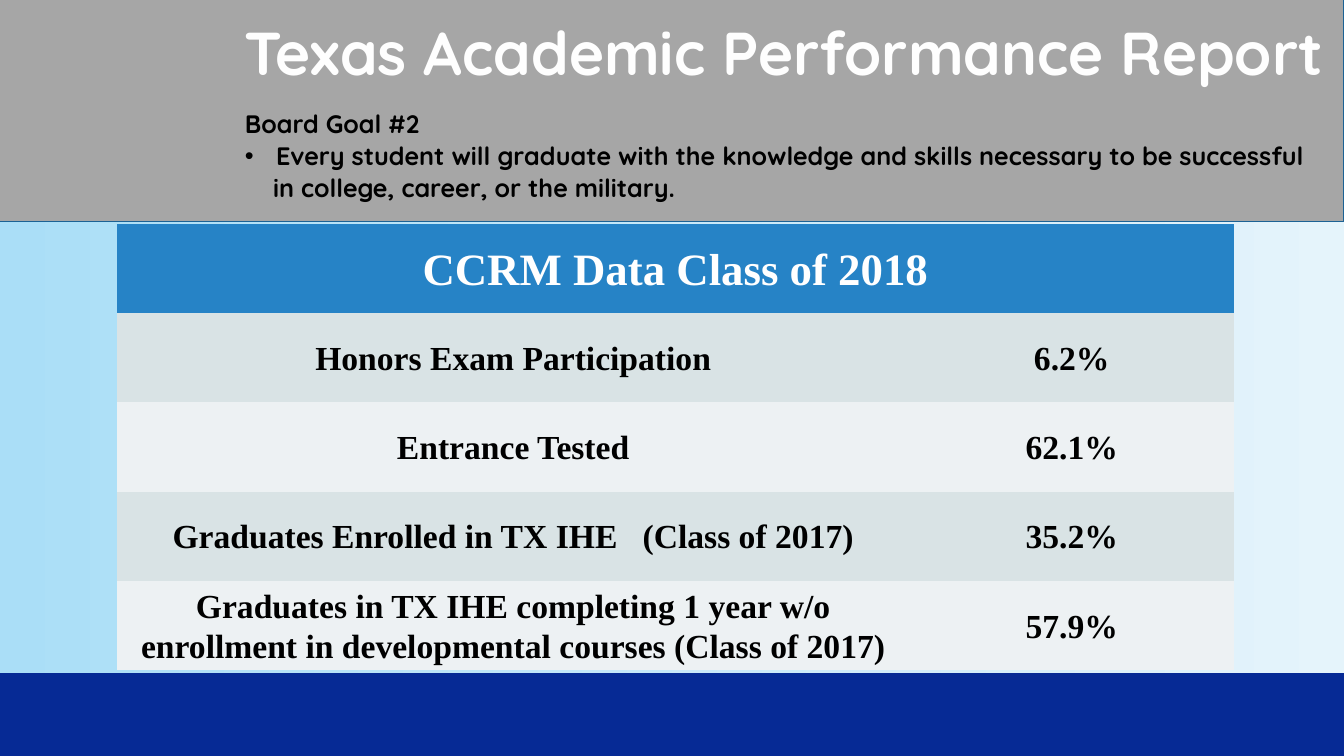
import pptx
import pptx.dml.color
import pptx.enum.shapes
import pptx.enum.text
import pptx.oxml
import pptx.oxml.ns
import pptx.util
from pptx.dml.color import RGBColor
from pptx.util import Inches

GRAY = RGBColor(0xA6, 0xA6, 0xA6)
NAVY = RGBColor(0x06, 0x2A, 0x95)
SKY = RGBColor(0xAA, 0xDE, 0xF7)
PALE_SKY = RGBColor(0xE5, 0xF4, 0xFB)
EDGE_BLUE = RGBColor(0x1C, 0x62, 0x94)
HEADER_BLUE = RGBColor(0x26, 0x83, 0xC6)
DARK_ROW = RGBColor(0xD9, 0xE3, 0xE5)
LIGHT_ROW = RGBColor(0xED, 0xF1, 0xF3)
OFF_WHITE = RGBColor(0xFE, 0xFE, 0xFE)
WHITE = RGBColor(0xFF, 0xFF, 0xFF)
BLACK = RGBColor(0, 0, 0)

HEADING_FONT = "Quicksand"
TABLE_FONT = "Times New Roman"
PLAIN_TABLE_STYLE = "{2D5ABB26-0587-4C30-8999-92F81FD0307C}"

CCRM_ROWS = [
    ("CCRM Data Class of 2018", ""),
    ("Honors Exam Participation", "6.2%"),
    ("Entrance Tested", "62.1%"),
    ("Graduates Enrolled in TX IHE   (Class of 2017)", "35.2%"),
    ("Graduates in TX IHE completing 1 year w/o enrollment in "
     "developmental courses (Class of 2017)", "57.9%"),
]


def write_text(paragraph, text, *, font, size, color, align="LEFT", spacing=1.07,
               margin=0, indent=0, bullet=None):
    properties = paragraph._p.get_or_add_pPr()
    properties.set("marL", str(Inches(margin)))
    properties.set("indent", str(Inches(indent)))
    paragraph.alignment = getattr(pptx.enum.text.PP_ALIGN, align)
    paragraph.line_spacing = spacing
    paragraph.space_before = pptx.util.Pt(0)
    tag = "a:buChar" if bullet else "a:buNone"
    mark = pptx.oxml.parse_xml(f"<{tag} {pptx.oxml.ns.nsdecls('a')}/>")
    if bullet:
        mark.set("char", bullet)
    properties.append(mark)
    run = paragraph.add_run()
    run.text = text
    run.font.name = font
    run.font.size = pptx.util.Pt(size)
    run.font.bold = True
    run.font.color.rgb = color


def add_band(slide, top, height):
    """Add a full-width band behind the title and body."""
    shape = slide.shapes.add_shape(pptx.enum.shapes.MSO_SHAPE.RECTANGLE,
                                   0, Inches(top), Inches(13.33), Inches(height))
    shape.shadow.inherit = False
    shape.line.fill.background()
    slide.shapes.title.element.addprevious(shape.element)
    return shape


def place_text(placeholder, left, top, width, height):
    placeholder.left, placeholder.top = Inches(left), Inches(top)
    placeholder.width, placeholder.height = Inches(width), Inches(height)
    frame = placeholder.text_frame
    frame.word_wrap = True
    frame.auto_size = pptx.enum.text.MSO_AUTO_SIZE.NONE
    frame.vertical_anchor = pptx.enum.text.MSO_ANCHOR.TOP
    return frame


def add_ccrm_table(slide):
    table = slide.shapes.add_table(len(CCRM_ROWS), 2, Inches(1.16), Inches(2.22),
                                   Inches(11.08), Inches(4.43)).table
    table._tbl.tblPr.find(pptx.oxml.ns.qn("a:tableStyleId")).text = PLAIN_TABLE_STYLE
    table.columns[0].width = Inches(7.86)
    table.columns[1].width = Inches(3.22)
    table.cell(0, 0).merge(table.cell(0, 1))
    for row, texts in enumerate(CCRM_ROWS):
        is_header = row == 0
        for column, text in enumerate(texts):
            cell = table.cell(row, column)
            cell.fill.solid()
            cell.fill.fore_color.rgb = (HEADER_BLUE if is_header
                                        else DARK_ROW if row % 2 else LIGHT_ROW)
            cell.vertical_anchor = pptx.enum.text.MSO_ANCHOR.MIDDLE
            cell.margin_left = cell.margin_right = Inches(0.07)
            cell.margin_top = cell.margin_bottom = 0
            if text:
                write_text(cell.text_frame.paragraphs[0], text, font=TABLE_FONT,
                           size=32 if is_header else 24,
                           color=WHITE if is_header else BLACK, align="CENTER")


def main():
    presentation = pptx.Presentation()
    presentation.slide_width = Inches(13.33)
    presentation.slide_height = Inches(7.5)
    slide = presentation.slides.add_slide(presentation.slide_layouts[1])

    # Background and bands
    slide.background.fill.solid()
    slide.background.fill.fore_color.rgb = NAVY
    header = add_band(slide, 0, 2.2)
    header.fill.solid()
    header.fill.fore_color.rgb = GRAY
    header.line.color.rgb = EDGE_BLUE
    header.line.width = pptx.util.Pt(0.75)
    sky = add_band(slide, 2.2, 4.48)
    sky.fill.gradient()
    sky.fill.gradient_angle = 0
    for stop, color, position in zip(sky.fill.gradient_stops, (SKY, PALE_SKY), (0, 1)):
        stop.color.rgb = color
        stop.position = position

    # Title
    title = place_text(slide.shapes.title, 2.33, 0.1, 11, 1.12)
    write_text(title.paragraphs[0], "Texas Academic Performance Report",
               font=HEADING_FONT, size=43.2, color=OFF_WHITE, spacing=1)

    # Board goal
    goal = place_text(slide.placeholders[1], 2.33, 1, 11, 1.07)
    goal_lines = [
        ("Board Goal #2", {}),
        ("Every student will graduate with the knowledge and skills necessary "
         "to be successful", {"margin": 0.31, "indent": -0.31, "bullet": "•"}),
        ("in college, career, or the military.", {"margin": 0.28}),
    ]
    for index, (text, layout) in enumerate(goal_lines):
        paragraph = goal.add_paragraph() if index else goal.paragraphs[0]
        write_text(paragraph, text, font=HEADING_FONT, size=18, color=BLACK, **layout)

    # Results table
    add_ccrm_table(slide)
    presentation.save("out.pptx")


if __name__ == "__main__":
    main()
